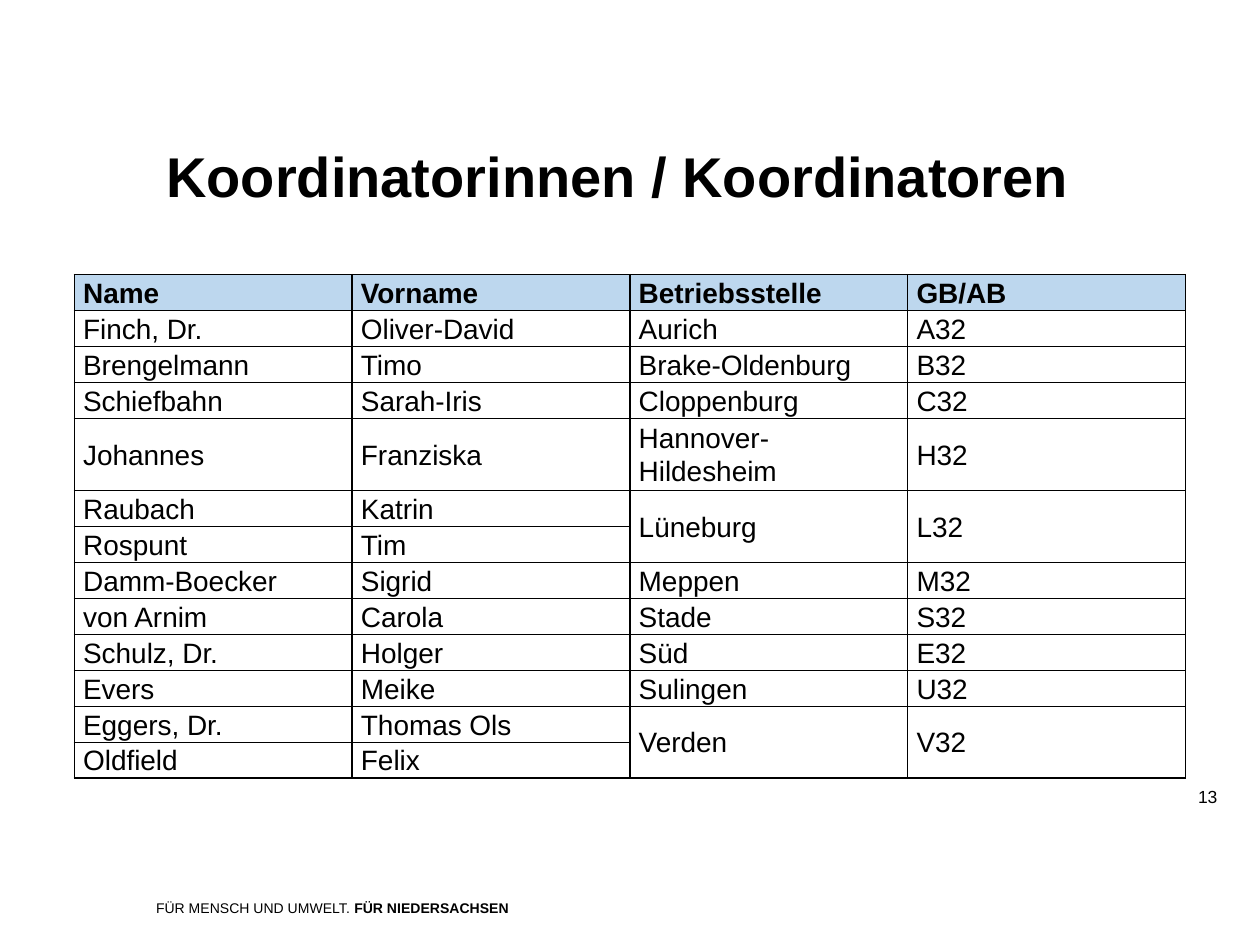
import pptx
import pptx.util
import pptx.dml.color
import pptx.enum.text
import pptx.oxml
import pptx.oxml.ns

# Content
TITLE = "Koordinatorinnen / Koordinatoren"
FOOTER = [("FÜR MENSCH UND UMWELT. ", False), ("FÜR NIEDERSACHSEN", True)]
PAGE = "13"
# None continues the cell above
ROWS = [
    ("Name", "Vorname", "Betriebsstelle", "GB/AB"),
    ("Finch, Dr.", "Oliver-David", "Aurich", "A32"),
    ("Brengelmann", "Timo", "Brake-Oldenburg", "B32"),
    ("Schiefbahn", "Sarah-Iris", "Cloppenburg", "C32"),
    ("Johannes", "Franziska", "Hannover-Hildesheim", "H32"),
    ("Raubach", "Katrin", "Lüneburg", "L32"),
    ("Rospunt", "Tim", None, None),
    ("Damm-Boecker", "Sigrid", "Meppen", "M32"),
    ("von Arnim", "Carola", "Stade", "S32"),
    ("Schulz, Dr.", "Holger", "Süd", "E32"),
    ("Evers", "Meike", "Sulingen", "U32"),
    ("Eggers, Dr.", "Thomas Ols", "Verden", "V32"),
    ("Oldfield", "Felix", None, None),
]
TALL_ROW = 4  # its place name takes two lines

THEME = {"font": "Arial", "text": "000000", "header": "BDD7EE", "line": "000000",
         "title": 32, "body": 16, "page": 10, "footer": 8}

Inches, Pt = pptx.util.Inches, pptx.util.Pt
RGB = pptx.dml.color.RGBColor.from_string
MIDDLE = pptx.enum.text.MSO_ANCHOR.MIDDLE
LEFT = pptx.enum.text.PP_ALIGN.LEFT


def style(font, size, bold=False):
    font.name, font.size, font.bold = THEME["font"], Pt(THEME[size]), bold
    font.color.rgb = RGB(THEME["text"])


def add_text(s, box, runs, size):
    tf = s.shapes.add_textbox(*map(Inches, box)).text_frame
    tf.word_wrap = True
    for text, bold in runs:
        r = tf.paragraphs[0].add_run()
        r.text = text
        style(r.font, size, bold)


def add_borders(cell):
    tcPr = cell._tc.get_or_add_tcPr()
    for i, side in enumerate("LRTB"):
        tcPr.insert(i, pptx.oxml.parse_xml(
            f'<a:ln{side} {pptx.oxml.ns.nsdecls("a")} w="{Pt(1)}"><a:solidFill>'
            f'<a:srgbClr val="{THEME["line"]}"/></a:solidFill></a:ln{side}>'))


def fill_cell(cell, text, header):
    if header:
        cell.fill.solid()
        cell.fill.fore_color.rgb = RGB(THEME["header"])
    else:
        cell.fill.background()
    cell.vertical_anchor = MIDDLE
    cell.margin_left = cell.margin_right = Inches(0.07)
    cell.margin_top = cell.margin_bottom = 0
    p = cell.text_frame.paragraphs[0]
    p.line_spacing = 1.07
    p.font.size = Pt(THEME["body"])
    if text:
        p.text = text
        style(p.runs[0].font, "body", header)
    add_borders(cell)


def add_table(s, left, top, width, height):
    n_rows, n_cols = len(ROWS), len(ROWS[0])
    table = s.shapes.add_table(n_rows, n_cols, *map(Inches, (left, top, width, height))).table
    table.horz_banding = False
    for col in table.columns:
        col.width = Inches(width / n_cols)
    unit = height / (n_rows + 1)  # the tall row counts twice
    for i, row in enumerate(ROWS):
        table.rows[i].height = Inches(unit * (2 if i == TALL_ROW else 1))
        for j, text in enumerate(row):
            fill_cell(table.cell(i, j), text, i == 0)
            if text is None:
                table.cell(i - 1, j).merge(table.cell(i, j))


def main():
    prs = pptx.Presentation()
    prs.slide_width, prs.slide_height = Inches(10), Inches(7.5)
    s = prs.slides.add_slide(prs.slide_layouts[5])

    # Title
    title = s.shapes.title
    title.left, title.top, title.width, title.height = map(Inches, (1.22, 1.07, 8.5, 0.64))
    tf = title.text_frame
    tf.text = TITLE
    tf.vertical_anchor = MIDDLE
    p = tf.paragraphs[0]
    p.alignment, p.space_after = LEFT, Pt(6)
    style(p.runs[0].font, "title", True)

    # Table of coordinators
    add_table(s, 0.59, 2.18, 8.82, 4)

    # Footer and page number
    add_text(s, (1.14, 7.09, 6.14, 0.24), FOOTER, "footer")
    add_text(s, (9.41, 6.19, 0.55, 0.27), [(PAGE, False)], "page")

    prs.save("out.pptx")


if __name__ == "__main__":
    main()
